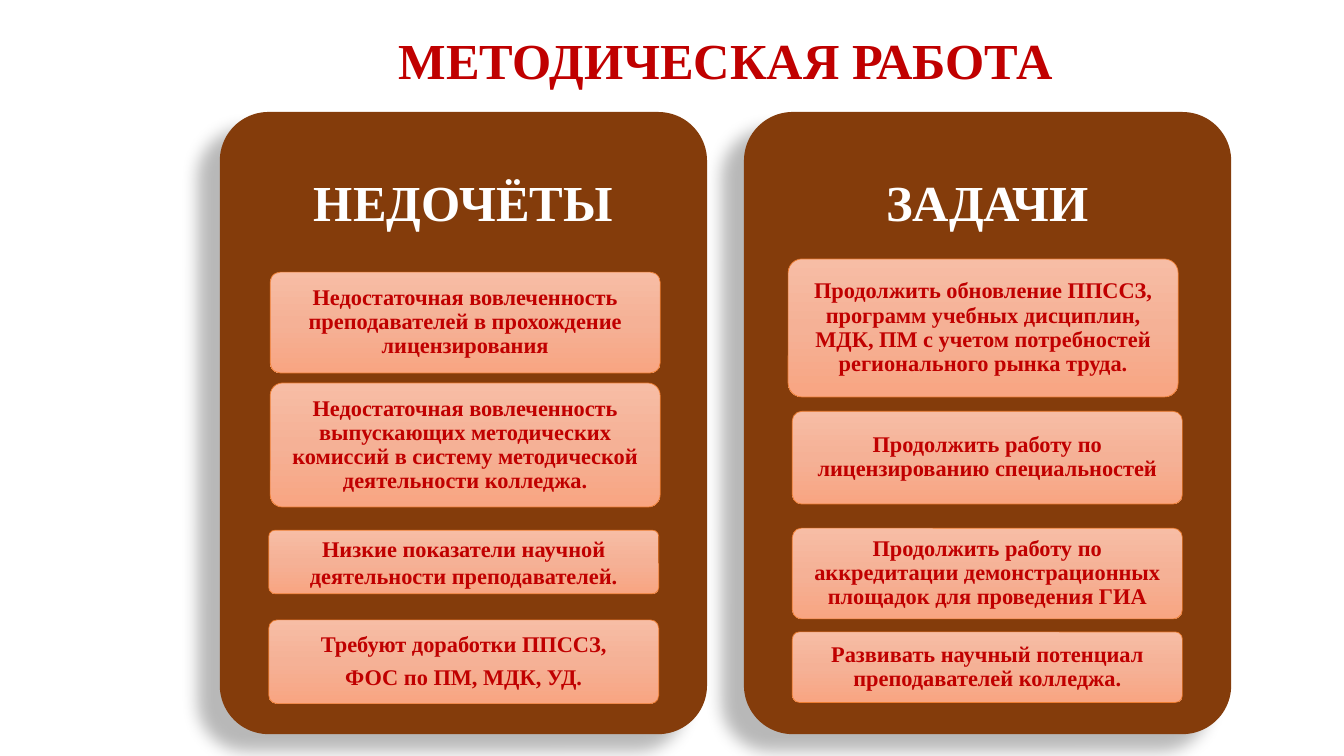
from copy import deepcopy
from dataclasses import dataclass

from lxml.etree import SubElement
from pptx import Presentation
from pptx.dml.color import RGBColor as RGB
from pptx.enum.shapes import MSO_SHAPE as Form
from pptx.enum.text import MSO_ANCHOR as Anchor, MSO_AUTO_SIZE as Fit, PP_ALIGN as Align
from pptx.oxml.ns import qn
from pptx.util import Pt


@dataclass(frozen=True)
class Theme:
    font: str = "Times New Roman"
    head: int = 36
    body: int = 16
    red: str = "C00000"
    white: str = "FFFFFF"
    brown: str = "843C0B"
    edge: str = "ED7D31"
    blend: tuple = ((0, "F7BDA5"), (0.5, "F5B196"), (1, "F8A582"))


class Deck:
    def __init__(self, theme):
        self.theme = theme
        self.prs = Presentation()
        self.prs.slide_width, self.prs.slide_height = Pt(960), Pt(540)
        self.slide = self.prs.slides.add_slide(self.prs.slide_layouts[5])

    def label(self, shape, lines, size, color, pad, lead=0.9, after=0.35):
        """Fill a shape with centred bold lines; after is a share of the type size."""
        frame = shape.text_frame
        frame.word_wrap, frame.auto_size = True, Fit.NONE
        frame.vertical_anchor = Anchor.MIDDLE
        frame.margin_left = frame.margin_right = Pt(pad[0])
        frame.margin_top = frame.margin_bottom = Pt(pad[1])
        for i, line in enumerate(lines):
            para = frame.add_paragraph() if i else frame.paragraphs[0]
            para.alignment, para.line_spacing = Align.CENTER, lead
            para.space_before, para.space_after = Pt(0), Pt(size * after)
            run = para.add_run()
            run.text = line
            font = run.font
            font.name, font.size, font.bold = self.theme.font, Pt(size), True
            font.color.rgb = RGB.from_string(color)

    def title(self, text, *box):
        shape = self.slide.shapes.title
        shape.left, shape.top, shape.width, shape.height = map(Pt, box)
        self.label(shape, [text], self.theme.head, self.theme.red, (7.2, 3.6), after=0)

    def block(self, *box):
        """Add a plain rounded rectangle."""
        shape = self.slide.shapes.add_shape(Form.ROUNDED_RECTANGLE, *map(Pt, box))
        shape.adjustments[0] = 0.1
        shape.shadow.inherit = False
        return shape

    def shade(self, shape):
        """Cast a soft shadow to the lower left."""
        effects = shape.element.spPr.find(qn("a:effectLst"))
        cast = SubElement(effects, qn("a:outerShdw"), blurRad=str(Pt(11.8)),
                          dist=str(Pt(19.7)), dir=str(141 * 60000),
                          algn="ctr", rotWithShape="0")
        tint = SubElement(cast, qn("a:srgbClr"), val="000000")
        SubElement(tint, qn("a:alpha"), val="28000")

    def panel(self, text, x, y, w, h):
        shape = self.block(x, y, w, h)
        shape.fill.solid()
        shape.fill.fore_color.rgb = RGB.from_string(self.theme.brown)
        shape.line.fill.background()
        self.shade(shape)
        head = self.slide.shapes.add_textbox(Pt(x), Pt(y), Pt(w), Pt(h * 0.3))
        self.label(head, [text], self.theme.head, self.theme.white, (10.8, 10.8))

    def card(self, lines, x, y, h, lead=0.9):
        shape = self.block(x, y, 278.6, h)
        fill = shape.fill
        fill.gradient()
        fill.gradient_angle = 270
        stops = shape.element.spPr.find(qn("a:gradFill")).find(qn("a:gsLst"))
        stops.append(deepcopy(stops[-1]))
        for stop, (place, color) in zip(fill.gradient_stops, self.theme.blend):
            stop.position = place
            stop.color.rgb = RGB.from_string(color)
        shape.line.color.rgb = RGB.from_string(self.theme.edge)
        shape.line.width = Pt(0.5)
        self.label(shape, lines, self.theme.body, self.theme.red, (3, 2.2), lead)


FLAWS = [
    (["Недостаточная вовлеченность преподавателей в прохождение лицензирования"],
     193, 194.4, 72),
    (["Недостаточная вовлеченность выпускающих методических комиссий "
      "в систему методической деятельности колледжа."], 193, 273.6, 88.6),
    (["Низкие показатели научной деятельности преподавателей."],
     192, 378.7, 45.4, 1.0),
    (["Требуют доработки ППССЗ,", "ФОС по ПМ, МДК, УД."], 192, 442.8, 59.8),
]
TASKS = [
    (["Продолжить обновление ППССЗ, программ учебных дисциплин, МДК, ПМ "
      "с учетом потребностей регионального рынка труда."], 563, 185, 98.6),
    (["Продолжить работу по лицензированию специальностей"], 566, 293.8, 66.2),
    (["Продолжить работу по аккредитации демонстрационных площадок "
      "для проведения ГИА"], 566, 377.3, 64.8),
    (["Развивать научный потенциал преподавателей колледжа."], 566, 451.4, 50.4),
]


def main():
    deck = Deck(Theme())
    deck.title("МЕТОДИЧЕСКАЯ РАБОТА", 104.4, -7.2, 828, 104.4)
    for name, x, cards in (("НЕДОЧЁТЫ", 157, FLAWS), ("ЗАДАЧИ", 531.4, TASKS)):
        deck.panel(name, x, 80, 348, 444.4)
        for card in cards:
            deck.card(*card)
    deck.prs.save("out.pptx")


if __name__ == "__main__":
    main()
